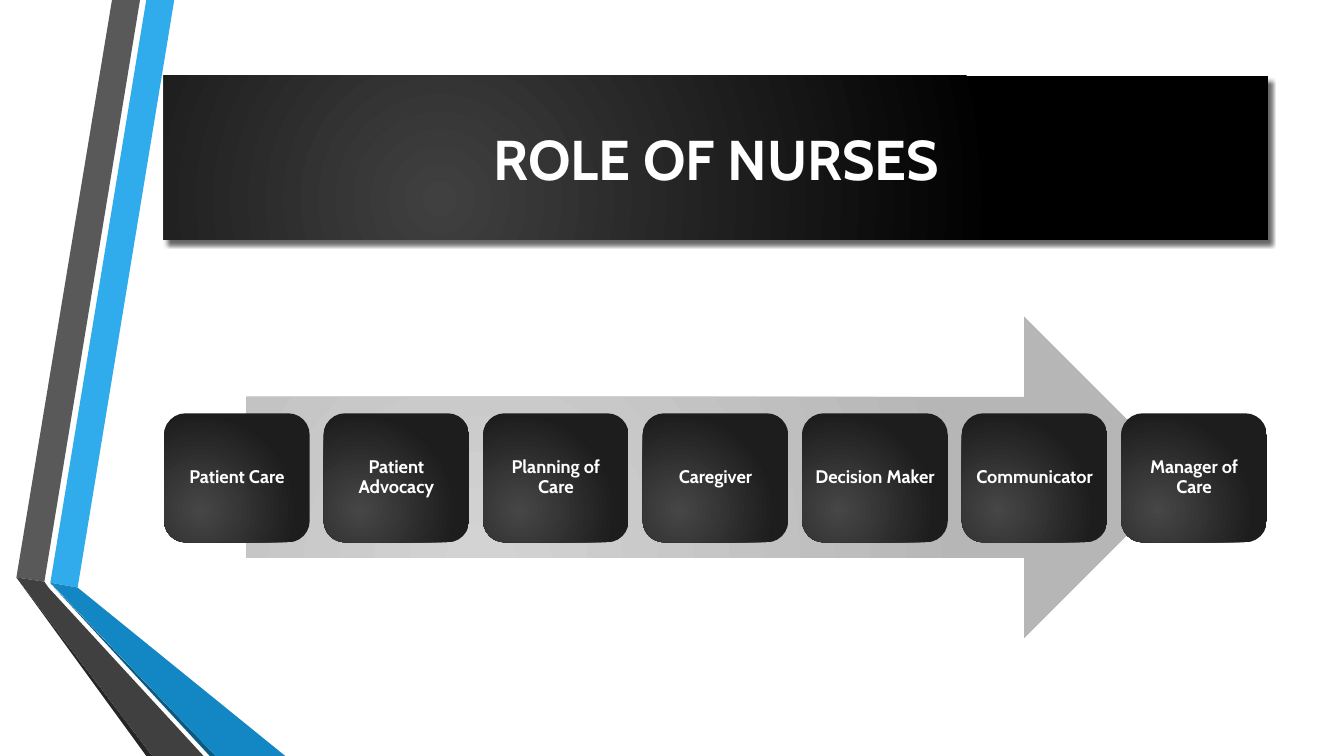
from lxml import etree
from pptx import Presentation
from pptx.dml.color import RGBColor
from pptx.enum.shapes import MSO_SHAPE
from pptx.enum.text import MSO_ANCHOR, MSO_AUTO_SIZE, PP_ALIGN
from pptx.oxml import parse_xml
from pptx.oxml.ns import nsdecls, qn
from pptx.util import Pt

RECT_ARROW = MSO_SHAPE.RIGHT_ARROW
ROUND_RECT = MSO_SHAPE.ROUNDED_RECTANGLE
MIDDLE = MSO_ANCHOR.MIDDLE
CENTER = PP_ALIGN.CENTER
NO_AUTOFIT = MSO_AUTO_SIZE.NONE
TITLE_ONLY = 5

FONT = "Cabin"
WHITE = RGBColor(0xFF, 0xFF, 0xFF)
BLACK = RGBColor(0x00, 0x00, 0x00)
BLUE = RGBColor(0x30, 0xAC, 0xEC)
MID_BLUE = RGBColor(0x12, 0x87, 0xC3)
DEEP_BLUE = RGBColor(0x0C, 0x5A, 0x82)
GREY = RGBColor(0x59, 0x59, 0x59)
DARK_GREY = RGBColor(0x40, 0x40, 0x40)
DEEP_GREY = RGBColor(0x26, 0x26, 0x26)
ARROW_INNER = RGBColor(0xD3, 0xD3, 0xD3)
ARROW_OUTER = RGBColor(0xB6, 0xB6, 0xB6)
CARD_INNER = RGBColor(0x46, 0x46, 0x46)
CARD_OUTER = RGBColor(0x1D, 0x1D, 0x1D)

# Ribbon outlines in points, from back to front
RIBBONS = [
    (BLUE, [(36, 416.2), (55.5, 419.7), (124.5, 0), (104.5, 0)]),
    (GREY, [(100, 0), (80, 0), (11.7, 412.5), (31.7, 415.5)]),
    (DEEP_GREY, [(11.7, 412.5), (104.5, 540), (108.8, 540)]),
    (DEEP_BLUE, [(36, 416.7), (149.8, 540), (154, 540)]),
    (MID_BLUE, [(36, 416.2), (154, 540), (203.8, 540), (55.5, 419.7)]),
    (DARK_GREY, [(145.4, 540), (34.6, 419.7), (31.7, 415.5),
                 (11.7, 412.5), (108.8, 540)]),
]

ROLES = ["Patient Care", "Patient Advocacy", "Planning of Care", "Caregiver",
         "Decision Maker", "Communicator", "Manager of Care"]
CARD_LEFT, CARD_TOP = 117.2, 295.2
CARD_WIDTH, CARD_HEIGHT = 104, 92.2
CARD_PITCH = 113.95


def fill_radial(sp, inner, outer):
    """Circular gradient centred in the lower left quarter of the shape."""
    sp.fill.gradient()
    for stop, color in zip(sp.fill.gradient_stops, (inner, outer)):
        stop.color.rgb = color
    grad = sp.fill._xPr.find(qn("a:gradFill"))
    grad.remove(grad.find(qn("a:lin")))
    path = etree.SubElement(grad, qn("a:path"), {"path": "circle"})
    etree.SubElement(path, qn("a:fillToRect"),
                     l="50000", t="100000", r="100000", b="50000")


def add_drop_shadow(sp):
    sp.shadow.inherit = False
    effects = sp._element.spPr.find(qn("a:effectLst"))
    effects.append(parse_xml(
        f'<a:outerShdw {nsdecls("a")} blurRad="38100" dist="50800" '
        'dir="3600000" rotWithShape="0"><a:srgbClr val="000000">'
        '<a:alpha val="60000"/></a:srgbClr></a:outerShdw>'))


def write_text(sp, text, size, line_spacing):
    tf = sp.text_frame
    tf.word_wrap = True
    tf.auto_size = NO_AUTOFIT
    tf.vertical_anchor = MIDDLE
    tf.margin_left = tf.margin_right = Pt(3.6)
    tf.margin_top = tf.margin_bottom = Pt(3.6)
    p = tf.paragraphs[0]
    p.alignment = CENTER
    p.line_spacing = line_spacing
    r = p.add_run()
    r.text = text
    r.font.name = FONT
    r.font.size = Pt(size)
    r.font.bold = True
    r.font.color.rgb = WHITE


def add_ribbon(slide, color, points):
    start, *rest = [(Pt(x), Pt(y)) for x, y in points]
    builder = slide.shapes.build_freeform(*start)
    builder.add_line_segments(rest, close=True)
    sp = builder.convert_to_shape()
    sp.fill.solid()
    sp.fill.fore_color.rgb = color
    sp.line.fill.background()
    sp.shadow.inherit = False


def add_title(slide, text):
    sp = slide.shapes.title
    sp.left, sp.top, sp.width, sp.height = Pt(117), Pt(54), Pt(789), Pt(117.4)
    fill_radial(sp, DARK_GREY, BLACK)
    add_drop_shadow(sp)
    write_text(sp, text, 40, 1)


def add_gradient_shape(slide, kind, left, top, width, height, inner, outer):
    sp = slide.shapes.add_shape(kind, Pt(left), Pt(top), Pt(width), Pt(height))
    fill_radial(sp, inner, outer)
    sp.line.fill.background()
    sp.shadow.inherit = False
    return sp


def main():
    prs = Presentation()
    prs.slide_width, prs.slide_height = Pt(960), Pt(540)
    slide = prs.slides.add_slide(prs.slide_layouts[TITLE_ONLY])
    for color, points in RIBBONS:
        add_ribbon(slide, color, points)
    add_title(slide, "ROLE OF NURSES")
    add_gradient_shape(slide, RECT_ARROW, 176, 226, 670.5, 230,
                       ARROW_INNER, ARROW_OUTER)
    for i, role in enumerate(ROLES):
        card = add_gradient_shape(slide, ROUND_RECT, CARD_LEFT + i * CARD_PITCH,
                                  CARD_TOP, CARD_WIDTH, CARD_HEIGHT,
                                  CARD_INNER, CARD_OUTER)
        write_text(card, role, 13, 0.9)
    prs.save("out.pptx")


if __name__ == "__main__":
    main()
